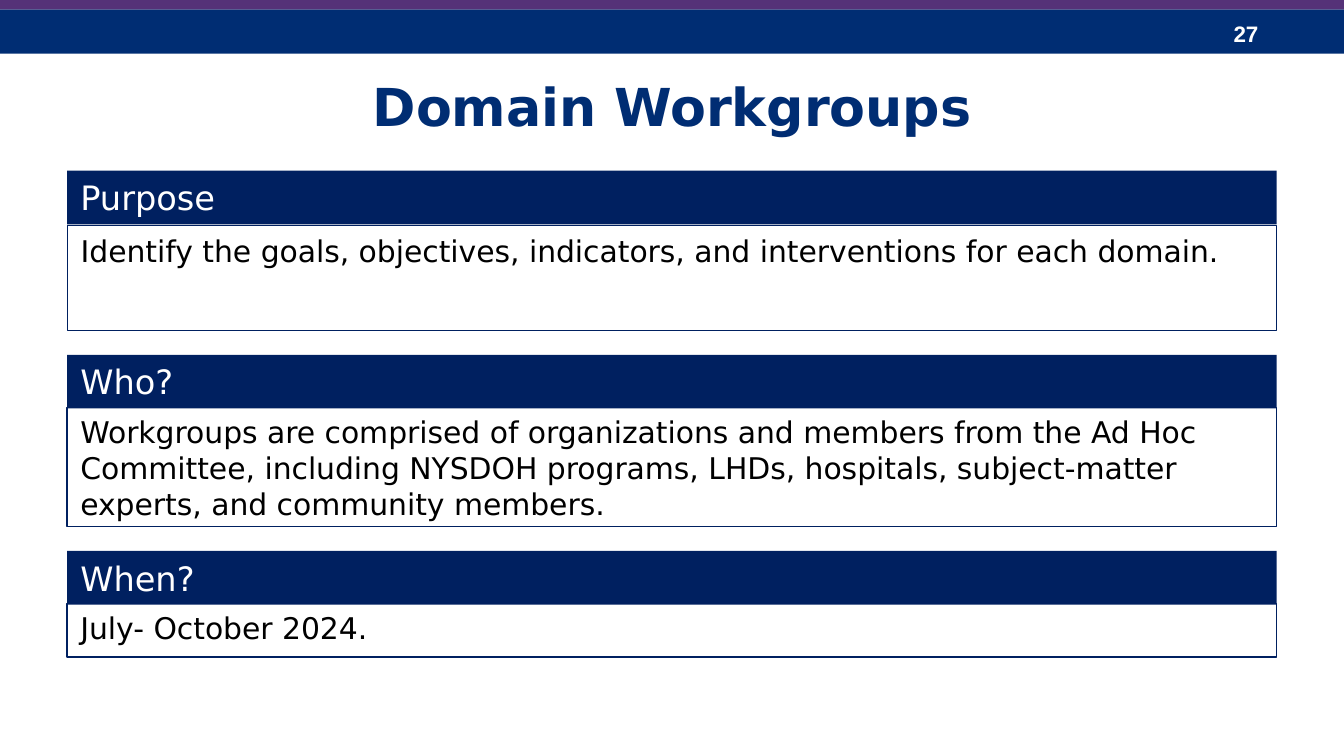
from dataclasses import dataclass

from pptx import Presentation
from pptx import util as u
from pptx.dml import color as c
from pptx.enum import shapes, text
from pptx.oxml import xmlchemy


@dataclass(frozen=True)
class Theme:
    band: str = "002D73"
    accent: str = "553278"
    panel: str = "002060"
    light: str = "FFFFFF"
    dark: str = "000000"
    face: str = "DejaVu Sans"
    number_face: str = "Arial"
    title_size: int = 28
    heading_size: int = 18
    body_size: int = 16
    number_size: int = 12


THEME = Theme()
MARGIN, PANEL_WIDTH, HEADING_HEIGHT = 0.5, 9, 0.4
PANELS = [
    (1.27, 0.41, 0.78, "Purpose",
     "Identify the goals, objectives, indicators, and interventions for each domain."),
    (2.64, 0.39, 0.89, "Who?",
     "Workgroups are comprised of organizations and members from the Ad Hoc Committee, "
     "including NYSDOH programs, LHDs, hospitals, subject-matter experts, and community members."),
    (4.1, 0.39, 0.4, "When?", "July- October 2024."),
]


def place(shape, left, top, width, height):
    shape.left, shape.top = u.Inches(left), u.Inches(top)
    shape.width, shape.height = u.Inches(width), u.Inches(height)


def write(shape, wording, *, size, color, face=THEME.face, bold=False,
          align=text.PP_ALIGN.LEFT, anchor=text.MSO_ANCHOR.TOP,
          fit=text.MSO_AUTO_SIZE.NONE):
    frame = shape.text_frame
    frame.word_wrap = True
    frame.auto_size = fit
    frame.vertical_anchor = anchor
    para = frame.paragraphs[0]
    para.alignment = align
    para.space_before = u.Pt(0)
    span = para.add_run()
    span.text = wording
    span.font.name = face
    span.font.size = u.Pt(size)
    span.font.bold = bold
    span.font.color.rgb = c.RGBColor.from_string(color)


def remove_bullet(para):
    properties = para._p.get_or_add_pPr()
    properties.set("marL", "0")
    properties.set("indent", "0")
    properties.append(xmlchemy.OxmlElement("a:buNone"))


def add_rectangle(page, left, top, width, height, fill=None):
    box = page.shapes.add_shape(
        shapes.MSO_SHAPE.RECTANGLE,
        u.Inches(left), u.Inches(top), u.Inches(width), u.Inches(height))
    box.shadow.inherit = False
    box.line.fill.background()
    if fill:
        box.fill.solid()
        box.fill.fore_color.rgb = c.RGBColor.from_string(fill)
    else:
        box.fill.background()
    return box


def add_header(page, left, top, width, number):
    add_rectangle(page, left, top + 0.07, width, 0.33, THEME.band)
    add_rectangle(page, left, top, width, 0.07, THEME.accent)
    box = page.shapes.add_textbox(
        u.Inches(left + width - 0.92), u.Inches(top + 0.1), u.Inches(0.75), u.Inches(0.3))
    write(box, number, size=THEME.number_size, color=THEME.light,
          face=THEME.number_face, bold=True)


def add_title(page, left, top, width, height, wording):
    title = page.shapes.title
    place(title, left, top, width, height)
    write(title, wording, size=THEME.title_size, color=THEME.band, bold=True,
          align=text.PP_ALIGN.CENTER, anchor=text.MSO_ANCHOR.MIDDLE)


def add_panel(page, left, top, width, offset, height, heading, wording, body=None):
    area = (left, top + offset, width, height)
    if body is None:
        body = add_rectangle(page, *area)
    else:
        place(body, *area)
        remove_bullet(body.text_frame.paragraphs[0])
    body.line.color.rgb = c.RGBColor.from_string(THEME.panel)
    body.line.width = u.Pt(0.75)
    write(body, wording, size=THEME.body_size, color=THEME.dark)
    bar = add_rectangle(page, left, top, width, HEADING_HEIGHT, THEME.panel)
    write(bar, heading, size=THEME.heading_size, color=THEME.light,
          fit=text.MSO_AUTO_SIZE.SHAPE_TO_FIT_TEXT)


def main():
    deck = Presentation()
    deck.slide_width = u.Inches(10)
    deck.slide_height = deck.slide_width * 9 // 16
    page = deck.slides.add_slide(deck.slide_layouts[1])
    add_header(page, 0, 0, 10, "27")
    add_title(page, MARGIN, 0.4, PANEL_WIDTH, 0.77, "Domain Workgroups")
    bodies = [page.placeholders[1], None, None]
    for (top, offset, height, heading, wording), body in zip(PANELS, bodies):
        add_panel(page, MARGIN, top, PANEL_WIDTH, offset, height, heading, wording, body)
    deck.save("out.pptx")


if __name__ == "__main__":
    main()
